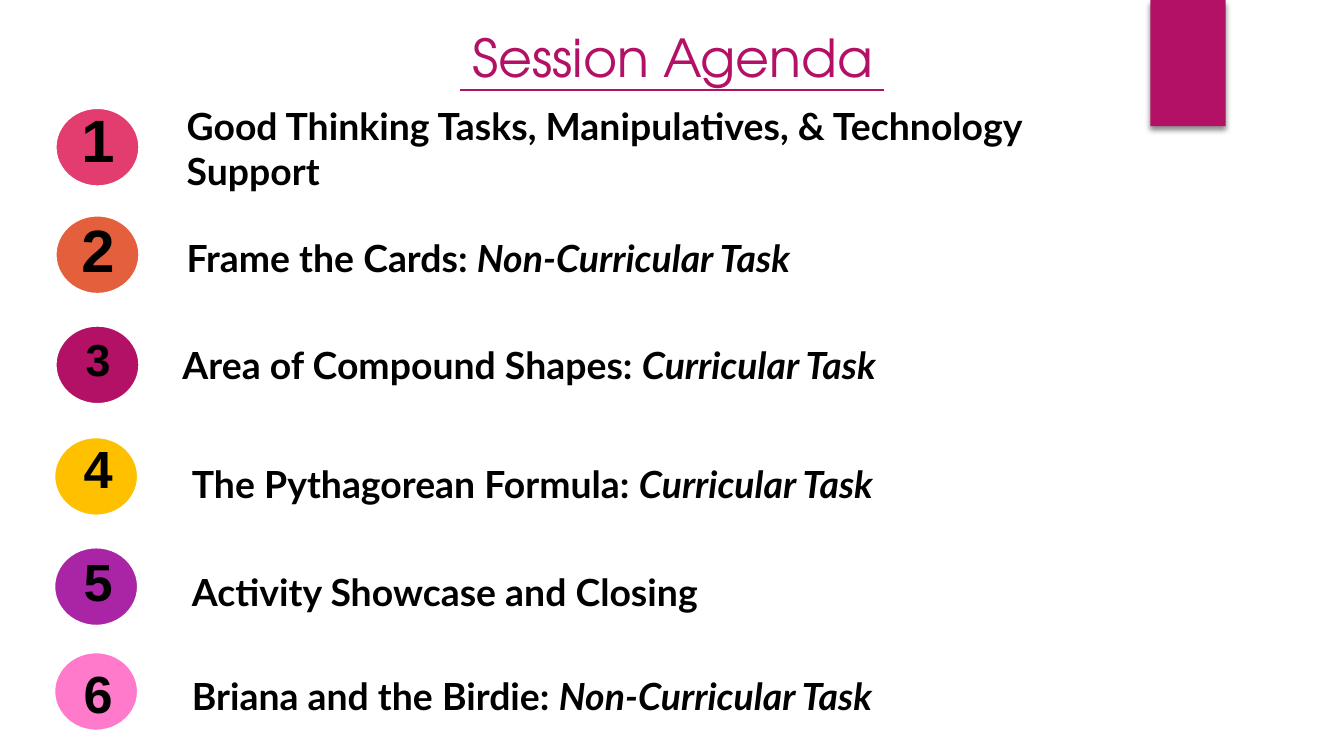
from lxml import etree
from pptx import Presentation
from pptx.dml.color import RGBColor
from pptx.enum.shapes import MSO_CONNECTOR, MSO_SHAPE
from pptx.enum.text import MSO_ANCHOR, PP_ALIGN
from pptx.oxml.ns import qn
from pptx.util import Inches, Pt

RECTANGLE, OVAL = MSO_SHAPE.RECTANGLE, MSO_SHAPE.OVAL
STRAIGHT = MSO_CONNECTOR.STRAIGHT
MIDDLE, BOTTOM = MSO_ANCHOR.MIDDLE, MSO_ANCHOR.BOTTOM
LEFT, CENTER = PP_ALIGN.LEFT, PP_ALIGN.CENTER

COLORS = {
    "magenta": "B31166", "rose": "E33D6F", "orange": "E45F3C",
    "gold": "FFC000", "purple": "A925A5", "pink": "FF7ACB",
    "white": "FFFFFF", "black": "000000",
}

TITLE = {"name": "TeX Gyre Adventor", "size": Pt(28)}
TOPIC = {"name": "Lato", "size": Pt(20), "bold": True}
NUMBER = {"name": "Arial", "bold": True}

# Badge color, badge left and top, number top and size, topic place, topic, kind of task
AGENDA = [
    ("rose", 0.4, 0.79, 0.99, 32, (1.29, 0.8, 7.11, 0.6),
     "Good Thinking Tasks, Manipulatives, & Technology Support", ""),
    ("orange", 0.4, 1.59, 1.81, 32, (1.29, 1.67, 6.44, 0.5),
     "Frame the Cards: ", "Non-Curricular Task"),
    ("magenta", 0.4, 2.41, 2.56, 24, (1.26, 2.46, 6.24, 0.5),
     "Area of Compound Shapes: ", "Curricular Task"),
    ("gold", 0.39, 3.24, 3.4, 28, (1.33, 3.35, 6.44, 0.5),
     "The Pythagorean Formula: ", "Curricular Task"),
    ("purple", 0.39, 4.06, 4.24, 28, (1.33, 4.15, 6.44, 0.5),
     "Activity Showcase and Closing", ""),
    ("pink", 0.39, 4.84, 5.08, 28, (1.33, 4.95, 5.9, 0.45),
     "Briana and the Birdie: ", "Non-Curricular Task"),
]


def rgb(color):
    return RGBColor.from_string(COLORS[color])


def add_filled_shape(page, kind, place, color):
    shape = page.shapes.add_shape(kind, *map(Inches, place))
    shape.shadow.inherit = False
    shape.fill.solid()
    shape.fill.fore_color.rgb = rgb(color)
    shape.line.fill.background()
    return shape


def add_text(page, place, spans, font, color="black", align=LEFT, anchor=MIDDLE):
    """Add a one-paragraph box; each span is its text and whether it is italic."""
    box = page.shapes.add_textbox(*map(Inches, place))
    frame = box.text_frame
    frame.word_wrap = True
    frame.vertical_anchor = anchor
    for side in ("left", "top", "right", "bottom"):
        setattr(frame, f"margin_{side}", Inches(0.1))
    para = frame.paragraphs[0]
    para.alignment = align
    for text, italic in spans:
        span = para.add_run()
        span.text = text
        for name, value in font.items():
            setattr(span.font, name, value)
        span.font.italic = italic
        span.font.color.rgb = rgb(color)


def add_corner_tab(page):
    tab = add_filled_shape(page, RECTANGLE, (8.56, 0, 0.56, 0.94), "magenta")
    effects = tab._element.spPr.find(qn("a:effectLst"))
    shadow = etree.SubElement(effects, qn("a:outerShdw"), blurRad=str(Pt(3)),
                              dist=str(Pt(2)), dir="5400000", rotWithShape="0")
    tint = etree.SubElement(shadow, qn("a:srgbClr"), val=COLORS["black"])
    etree.SubElement(tint, qn("a:alpha"), val="45000")


def add_title(page):
    add_text(page, (0.79, 0.17, 8.43, 0.5), [("Session Agenda", False)],
             TITLE, "magenta", CENTER)
    rule = page.shapes.add_connector(
        STRAIGHT, *map(Inches, (6.58, 0.67, 3.42, 0.67)))
    rule.line.color.rgb = rgb("magenta")
    rule.line.width = Pt(0.75)
    etree.SubElement(rule._element.spPr, qn("a:effectLst"))


def add_badge(page, number, color, left, top, number_top, size):
    badge = add_filled_shape(page, OVAL, (left, top, 0.65, 0.61), color)
    badge.line.color.rgb = rgb("white")
    badge.line.width = Pt(3)
    add_text(page, (0.37, number_top, 0.72, 0.41), [(str(number), False)],
             {**NUMBER, "size": Pt(size)}, align=CENTER, anchor=BOTTOM)


def add_topic(page, place, topic, task):
    spans = [(topic, False)]
    if task:
        spans.append((task, True))
    add_text(page, place, spans, TOPIC)


def main():
    deck = Presentation()
    deck.slide_width = Inches(10)
    deck.slide_height = Inches(10 * 9 / 16)
    page = deck.slides.add_slide(deck.slide_layouts[6])
    add_corner_tab(page)
    add_title(page)
    for number, (*badge, place, topic, task) in enumerate(AGENDA, start=1):
        add_badge(page, number, *badge)
        add_topic(page, place, topic, task)
    deck.save("out.pptx")


if __name__ == "__main__":
    main()
